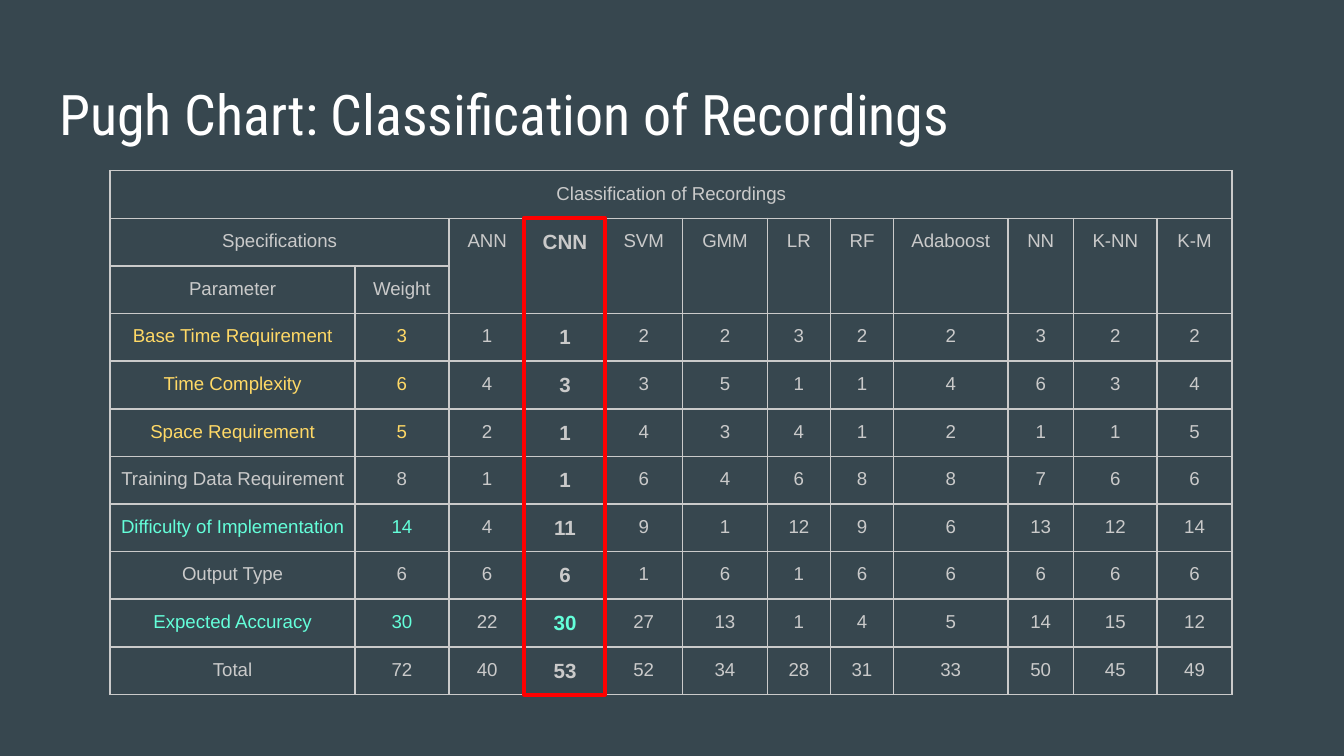
from lxml import etree
from pptx import Presentation
from pptx.dml.color import RGBColor
from pptx.enum.shapes import MSO_SHAPE
from pptx.enum.text import MSO_ANCHOR, PP_ALIGN
from pptx.oxml.ns import qn
from pptx.util import Inches, Pt

RECT = MSO_SHAPE.RECTANGLE
TOP = MSO_ANCHOR.TOP
LEFT, CENTER = PP_ALIGN.LEFT, PP_ALIGN.CENTER

SLATE = RGBColor(0x37, 0x47, 0x4F)
WHITE = RGBColor(0xFF, 0xFF, 0xFF)
GRAY = RGBColor(0xCA, 0xCA, 0xCA)
GOLD = RGBColor(0xFF, 0xD9, 0x66)
MINT = RGBColor(0x64, 0xFF, 0xDA)
RED = RGBColor(0xFF, 0x00, 0x00)

HEADS = ["ANN", "CNN", "SVM", "GMM", "LR", "RF", "Adaboost", "NN", "K-NN", "K-M"]
SCORES = [
    ("Base Time Requirement", GOLD, [3, 1, 1, 2, 2, 3, 2, 2, 3, 2, 2]),
    ("Time Complexity", GOLD, [6, 4, 3, 3, 5, 1, 1, 4, 6, 3, 4]),
    ("Space Requirement", GOLD, [5, 2, 1, 4, 3, 4, 1, 2, 1, 1, 5]),
    ("Training Data Requirement", GRAY, [8, 1, 1, 6, 4, 6, 8, 8, 7, 6, 6]),
    ("Difficulty of Implementation", MINT, [14, 4, 11, 9, 1, 12, 9, 6, 13, 12, 14]),
    ("Output Type", GRAY, [6, 6, 6, 1, 6, 1, 6, 6, 6, 6, 6]),
    ("Expected Accuracy", MINT, [30, 22, 30, 27, 13, 1, 4, 5, 14, 15, 12]),
    ("Total", GRAY, [72, 40, 53, 52, 34, 28, 31, 33, 50, 45, 49]),
]
WIDTHS = [1.82, 0.7, 0.57, 0.59, 0.58, 0.63, 0.47, 0.47, 0.85, 0.49, 0.62, 0.56]
BEST = 2 + HEADS.index("CNN")


class Deck:
    head = "Roboto Condensed"
    body = "Arial"
    pad = 0.07

    def __init__(self):
        self.prs = Presentation()
        self.prs.slide_width = Inches(10)
        self.prs.slide_height = Inches(10 * 9 / 16)
        self.slide = self.prs.slides.add_slide(self.prs.slide_layouts[5])
        fill = self.slide.background.fill
        fill.solid()
        fill.fore_color.rgb = SLATE

    def font(self, para, name, size, color, bold=False):
        font = para.font
        font.name, font.size, font.bold = name, Pt(size), bold
        font.color.rgb = color

    def title(self, text, x, y, w, h):
        box = self.slide.shapes.title
        box.left, box.top, box.width, box.height = map(Inches, (x, y, w, h))
        frame = box.text_frame
        frame.text = text
        frame.vertical_anchor = TOP
        frame.margin_left = frame.margin_right = Inches(0.1)
        frame.margin_top = frame.margin_bottom = Inches(0.1)
        para = frame.paragraphs[0]
        para.alignment = LEFT
        self.font(para, self.head, 30, WHITE)

    def border(self, cell):
        props = cell._tc.get_or_add_tcPr()
        for side in ("lnL", "lnR", "lnT", "lnB"):
            line = etree.SubElement(props, qn(f"a:{side}"), w=str(Pt(1)))
            fill = etree.SubElement(line, qn("a:solidFill"))
            etree.SubElement(fill, qn("a:srgbClr"), val=str(GRAY))

    def cell(self, cell, text, color, best):
        self.border(cell)
        cell.fill.background()
        cell.margin_left = cell.margin_right = Inches(self.pad)
        cell.margin_top = cell.margin_bottom = Inches(self.pad)
        cell.vertical_anchor = TOP
        cell.text = text
        para = cell.text_frame.paragraphs[0]
        para.alignment = CENTER
        para.line_spacing = 1.15
        self.font(para, self.body, 11 if best else 10, color, best)

    def table(self, rows, tint, spans, x, y, widths, h):
        shape = self.slide.shapes.add_table(
            len(rows), len(widths), Inches(x), Inches(y), Inches(sum(widths)), Inches(h))
        table = shape.table
        table.first_row = table.horz_banding = False
        for col, width in zip(table.columns, widths):
            col.width = Inches(width)
        for r, row in enumerate(rows):
            table.rows[r].height = Inches(h / len(rows))
            for c, text in enumerate(row):
                best = c == BEST and r > 0
                self.cell(table.cell(r, c), text, tint(r, c), best)
        for start, end in spans:
            table.cell(*start).merge(table.cell(*end))

    def frame(self, x, y, w, h):
        box = self.slide.shapes.add_shape(RECT, *map(Inches, (x, y, w, h)))
        box.shadow.inherit = False
        box.fill.background()
        box.line.color.rgb = RED
        box.line.width = Pt(2)


def tint(r, c):
    if r < 3:
        return GRAY
    name, color, _ = SCORES[r - 3]
    if c < 2 or (c == BEST and name == "Expected Accuracy"):
        return color
    return GRAY


def main():
    deck = Deck()
    deck.title("Pugh Chart: Classification of Recordings", 0.34, 0.49, 9.32, 0.63)
    last = len(WIDTHS) - 1
    rows = [
        ["Classification of Recordings"] + [""] * last,
        ["Specifications", ""] + HEADS,
        ["Parameter", "Weight"] + [""] * len(HEADS),
    ]
    rows += [[name] + [str(n) for n in nums] for name, _, nums in SCORES]
    spans = [((0, 0), (0, last)), ((1, 0), (1, 1))]
    spans += [((1, c), (2, c)) for c in range(2, last + 1)]
    deck.table(rows, tint, spans, 0.82, 1.27, WIDTHS, 3.9)
    deck.frame(3.9, 1.62, 0.6, 3.55)
    deck.prs.save("out.pptx")


if __name__ == "__main__":
    main()
